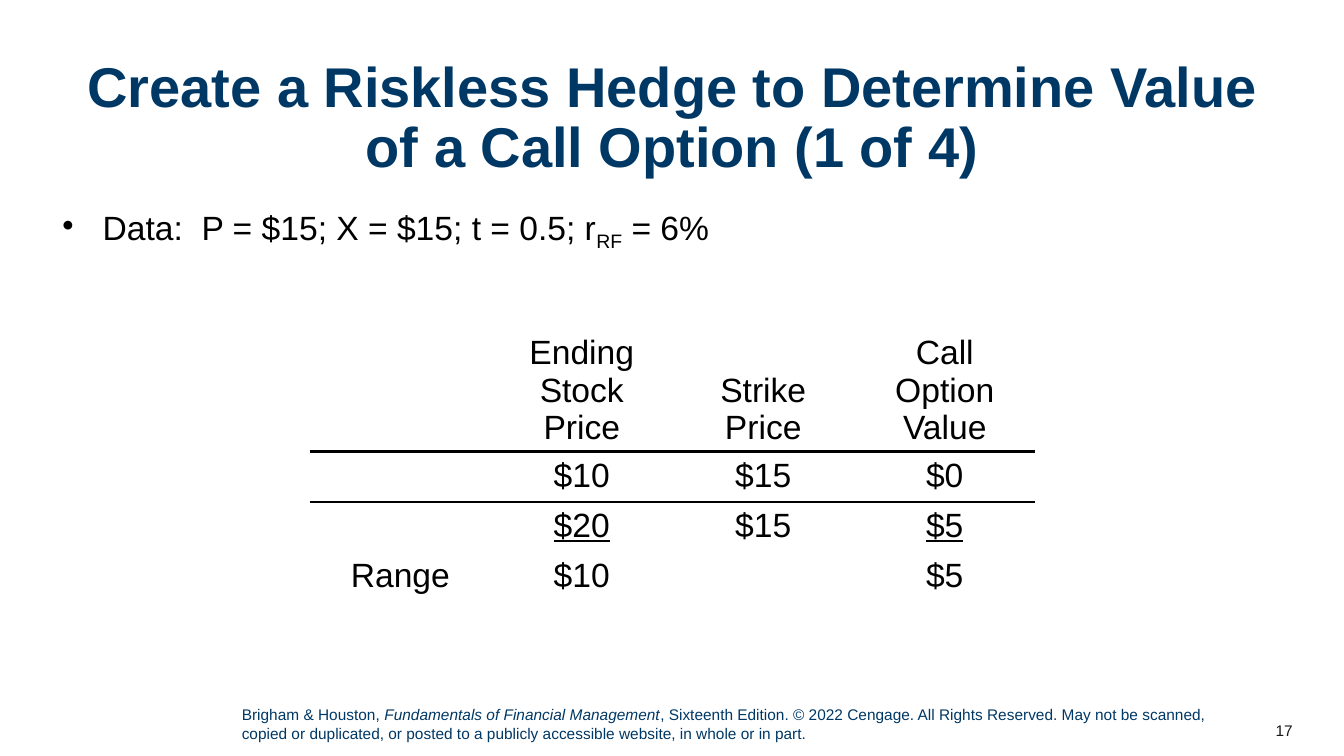
"""Build the slide on creating a riskless hedge to value a call option."""
from lxml import etree
from pptx import Presentation
from pptx.dml.color import RGBColor
from pptx.enum.text import MSO_ANCHOR as Anchor, PP_ALIGN as Align
from pptx.oxml import parse_xml
from pptx.oxml.ns import nsdecls, qn
from pptx.util import Inches, Pt

NAVY, BLACK, DARK = "003865", "000000", "181717"
TITLE = "Create a Riskless Hedge to Determine Value of a Call Option (1 of 4)"
DATA = [("Data:  P = $15; X = $15; t = 0.5; r", ""), ("RF", "sub"), (" = 6%", "")]
FOOTER = [
    ("Brigham & Houston, ", ""),
    ("Fundamentals of Financial Management", "italic"),
    (", Sixteenth Edition. © 2022 Cengage. All Rights Reserved. May not be scanned, "
     "copied or duplicated, or posted to a publicly accessible website, "
     "in whole or in part.", ""),
]
PAYOFFS = [
    ["", "Ending Stock Price", "Strike Price", "Call Option Value"],
    ["", "$10", "$15", "$0"],
    ["", "$20", "$15", "$5"],
    ["Range", "$10", "", "$5"],
]
UNDERLINED = {(2, 1), (2, 3)}
COLUMN_WIDTH, HEADER_HEIGHT, ROW_HEIGHT = 1.8, 1.2, 0.47
NO_STYLE = "{2D5ABB26-0587-4C30-8999-92F81FD0307C}"


def color(hex_value):
    return RGBColor.from_string(hex_value)


def style(paragraph, size, hex_value, align=Align.LEFT):
    paragraph.alignment = align
    font = paragraph.font
    font.name, font.size = "Arial", Pt(size)
    font.color.rgb = color(hex_value)


def add_text(slide, box, runs, size, hex_value, align=Align.LEFT, anchor=Anchor.TOP):
    frame = slide.shapes.add_textbox(*map(Inches, box)).text_frame
    frame.word_wrap = True
    frame.vertical_anchor = anchor
    paragraph = frame.paragraphs[0]
    for text, kind in runs:
        run = paragraph.add_run()
        run.text = text
        if kind == "italic":
            run.font.italic = True
        elif kind == "sub":
            run._r.get_or_add_rPr().set("baseline", "-25000")
    style(paragraph, size, hex_value, align)
    return paragraph


def add_bullet(paragraph, indent):
    properties = paragraph._p.get_or_add_pPr()
    properties.set("marL", str(Inches(indent)))
    properties.set("indent", str(-Inches(indent)))
    bullet = etree.Element(qn("a:buChar"), char="•")
    properties.insert_element_before(bullet, "a:tabLst", "a:defRPr", "a:extLst")


def add_border(cell, side):
    line = parse_xml(
        f'<a:{side} {nsdecls("a")} w="{Pt(2.25)}"><a:solidFill>'
        f'<a:srgbClr val="{BLACK}"/></a:solidFill></a:{side}>')
    cell._tc.get_or_add_tcPr().insert(0, line)


def add_payoff_table(slide, left, top):
    rows, columns = len(PAYOFFS), len(PAYOFFS[0])
    height = HEADER_HEIGHT + (rows - 1) * ROW_HEIGHT
    frame = slide.shapes.add_table(
        rows, columns, Inches(left), Inches(top),
        Inches(columns * COLUMN_WIDTH), Inches(height))
    table = frame.table
    table.first_row = table.horz_banding = False
    table._tbl.tblPr.find(qn("a:tableStyleId")).text = NO_STYLE
    for column in table.columns:
        column.width = Inches(COLUMN_WIDTH)
    for r, values in enumerate(PAYOFFS):
        table.rows[r].height = Inches(ROW_HEIGHT if r else HEADER_HEIGHT)
        for c, value in enumerate(values):
            cell = table.cell(r, c)
            cell.text = value
            cell.fill.background()
            cell.vertical_anchor = Anchor.TOP if r else Anchor.BOTTOM
            paragraph = cell.text_frame.paragraphs[0]
            style(paragraph, 24, BLACK, Align.CENTER)
            if (r, c) in UNDERLINED:
                paragraph.font.underline = True
            if r < 2:
                add_border(cell, "lnT" if r else "lnB")


def main():
    presentation = Presentation()
    presentation.slide_width, presentation.slide_height = Inches(13.33), Inches(7.5)
    slide = presentation.slides.add_slide(presentation.slide_layouts[6])

    title = add_text(slide, (0.52, 0.52, 12.29, 1.33), [(TITLE, "")], 40, NAVY,
                     Align.CENTER, Anchor.MIDDLE)
    title.font.bold = True
    title.line_spacing = 0.9
    data = add_text(slide, (0.52, 2, 12.29, 0.54), DATA, 24, BLACK)
    add_bullet(data, 0.4)
    add_payoff_table(slide, 3.07, 3.18)
    add_text(slide, (2.3, 6.95, 9.8, 0.47), FOOTER, 11, NAVY)
    add_text(slide, (12.12, 7.05, 0.8, 0.4), [("17", "")], 11, DARK,
             Align.RIGHT, Anchor.MIDDLE)
    presentation.save("out.pptx")


if __name__ == "__main__":
    main()
